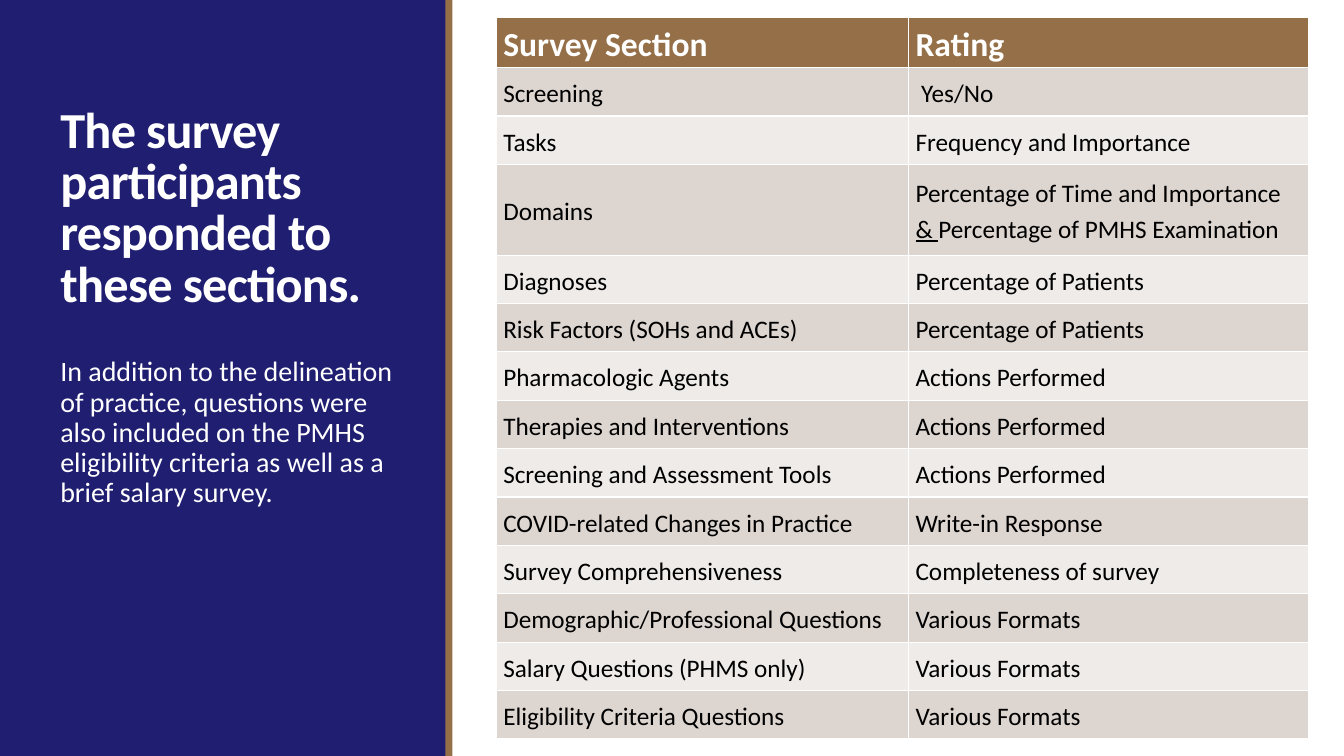
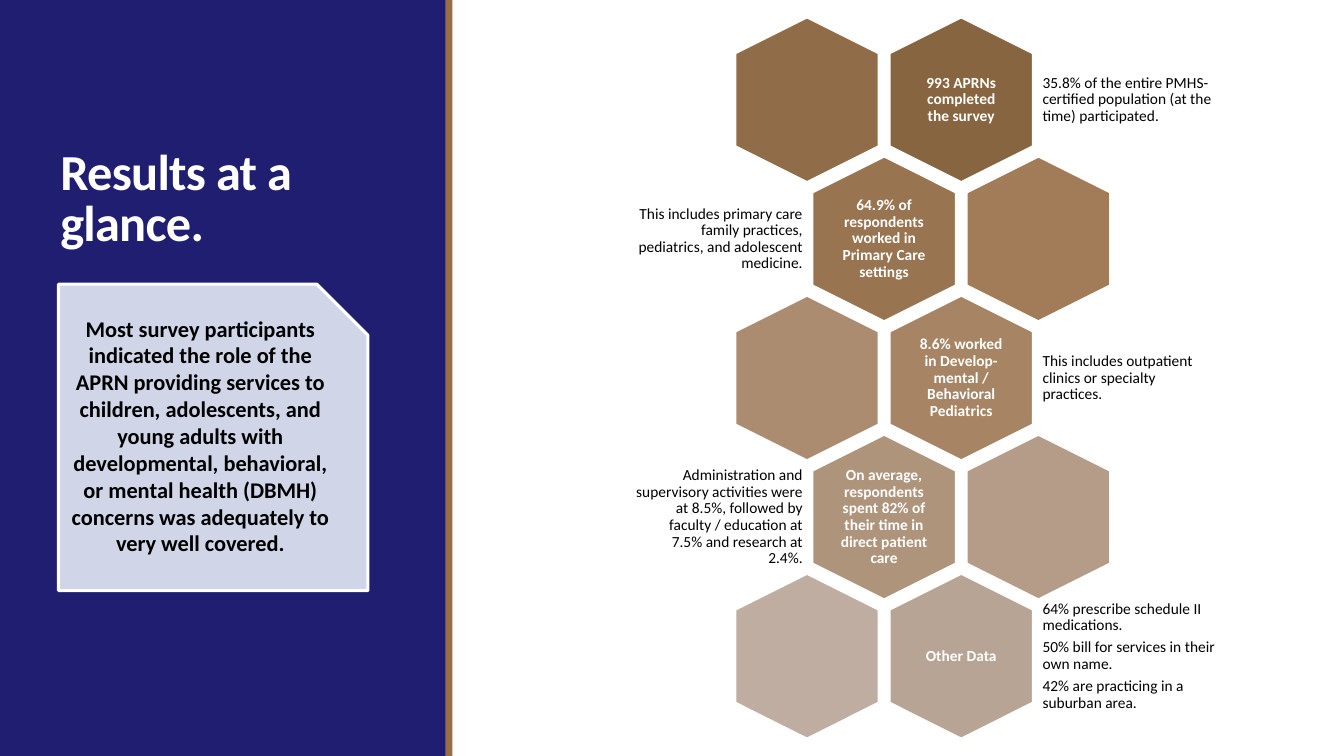
from pptx import Presentation
from pptx.dml.color import RGBColor
from pptx.enum.shapes import MSO_SHAPE as Preset
from pptx.enum.text import MSO_ANCHOR as Anchor, PP_ALIGN as Align
from pptx.util import Pt

COLORS = {
    "navy": "201E70", "bronze": "956F47", "white": "FFFFFF", "black": "000000",
    "pale_blue": "D0D5E7", "band_dark": "DDD5CF", "band_light": "EFEBE9",
}
# Each text style: font, paragraph and frame settings.
STYLES = {
    "title": dict(color="white", font=dict(size=Pt(36), bold=True), tracking=-50,
                  para=dict(line_spacing=0.85), frame=dict(vertical_anchor=Anchor.BOTTOM)),
    "body": dict(color="white", font=dict(size=Pt(20)),
                 para=dict(line_spacing=0.9, space_before=Pt(12), space_after=Pt(2))),
    "callout": dict(color="black", font=dict(size=Pt(16), bold=True),
                    para=dict(alignment=Align.CENTER)),
    "header": dict(color="white", font=dict(size=Pt(24), bold=True),
                   para=dict(line_spacing=1.15, space_before=Pt(3), space_after=Pt(2))),
    "cell": dict(color="black", font=dict(size=Pt(18), bold=False),
                 para=dict(line_spacing=1.15, space_before=Pt(3), space_after=Pt(2))),
    "finding": dict(color="white", font=dict(size=Pt(11), bold=True), inset=3.6,
                    para=dict(alignment=Align.CENTER, line_spacing=0.9),
                    frame=dict(vertical_anchor=Anchor.MIDDLE)),
    "detail": dict(color="black", font=dict(size=Pt(11)), inset=3.6,
                   para=dict(line_spacing=0.9, space_after=Pt(3.9)),
                   frame=dict(vertical_anchor=Anchor.MIDDLE)),
}
SIDES = ("margin_left", "margin_top", "margin_right", "margin_bottom")

SURVEY_SECTIONS = [
    ("Survey Section", "Rating"),
    ("Screening", " Yes/No"),
    ("Tasks", "Frequency and Importance"),
    ("Domains", [("Percentage of Time and Importance ", {}), ("& ", {"underline": True}),
                 ("Percentage of PMHS Examination", {})]),
    ("Diagnoses", "Percentage of Patients"),
    ("Risk Factors (SOHs and ACEs)", "Percentage of Patients"),
    ("Pharmacologic Agents", "Actions Performed"),
    ("Therapies and Interventions", "Actions Performed"),
    ("Screening and Assessment Tools", "Actions Performed"),
    ("COVID-related Changes in Practice", "Write-in Response"),
    ("Survey Comprehensiveness", "Completeness of survey"),
    ("Demographic/Professional Questions", "Various Formats"),
    ("Salary Questions (PHMS only)", "Various Formats"),
    ("Eligibility Criteria Questions", "Various Formats"),
]
HEADER_HEIGHT, ROW_HEIGHT, DOMAINS_HEIGHT = 36, 34.56, 64.8

# Finding, its details, and the fills of the left and right hexagon.
FINDINGS = [
    ("993 APRNs completed the survey",
     ["35.8% of the entire PMHS-certified population (at the time) participated."],
     ("906C48", "876540")),
    ("64.9% of respondents worked in Primary Care settings",
     ["This includes primary care family practices, pediatrics, and adolescent medicine."],
     ("997450", "A27C58")),
    ("8.6% worked in Develop-mental / Behavioral Pediatrics",
     ["This includes outpatient clinics or specialty practices."],
     ("AB8C70", "A78463")),
    ("On average, respondents spent 82% of their time in direct patient care",
     ["Administration and supervisory activities were at 8.5%, followed by "
      "faculty / education at 7.5% and research at 2.4%."],
     ("AF947C", "B49C88")),
    ("Other Data",
     ["64% prescribe schedule II medications.",
      "50% bill for services in their own name.",
      "42% are practicing in a suburban area."],
     ("BEADA0", "B8A494")),
]


def rgb(color):
    return RGBColor.from_string(COLORS.get(color, color))


def set_values(target, values):
    for name, value in values.items():
        setattr(target, name, value)


class Deck:
    def __init__(self):
        self.prs = Presentation()
        self.prs.slide_width, self.prs.slide_height = Pt(960), Pt(540)
        self.slide = None

    def new_slide(self, title, title_height):
        """Start a slide with the navy panel, its bronze edge and the title."""
        self.slide = self.prs.slides.add_slide(self.prs.slide_layouts[6])
        self.shape(Preset.RECTANGLE, (0, 0, 319, 540), "navy")
        self.shape(Preset.RECTANGLE, (318.2, 0, 5, 540), "bronze")
        self.text((36, 46.8, 252, title_height), [title], "title")

    def shape(self, preset, box, fill, line_width=0):
        shape = self.slide.shapes.add_shape(preset, *map(Pt, box))
        shape.shadow.inherit = False
        shape.fill.solid()
        shape.fill.fore_color.rgb = rgb(fill)
        if line_width:
            shape.line.color.rgb = rgb("white")
            shape.line.width = Pt(line_width)
        else:
            shape.line.fill.background()
        return shape

    def text(self, box, paragraphs, style, **para_values):
        frame = self.slide.shapes.add_textbox(*map(Pt, box)).text_frame
        self.fill_frame(frame, paragraphs, style, **para_values)

    def fill_frame(self, frame, paragraphs, style, **para_values):
        """Fill a frame; a paragraph is a string or a list of (text, font values)."""
        look = STYLES[style]
        frame.word_wrap = True
        set_values(frame, look.get("frame", {}))
        if "inset" in look:
            set_values(frame, dict.fromkeys(SIDES, Pt(look["inset"])))
        for index, content in enumerate(paragraphs):
            para = frame.add_paragraph() if index else frame.paragraphs[0]
            set_values(para, {**look["para"], **para_values})
            runs = [(content, {})] if isinstance(content, str) else content
            for words, font_values in runs:
                run = para.add_run()
                run.text = words
                set_values(run.font, {"name": "Calibri", **look["font"], **font_values})
                run.font.color.rgb = rgb(look["color"])
                if "tracking" in look:
                    run.font._element.set("spc", str(look["tracking"]))

    def table(self, left, top, widths, heights, rows):
        box = (left, top, sum(widths), sum(heights))
        table = self.slide.shapes.add_table(len(rows), len(widths), *map(Pt, box)).table
        for column, width in zip(table.columns, widths):
            column.width = Pt(width)
        for row_no, (row, height) in enumerate(zip(rows, heights)):
            table.rows[row_no].height = Pt(height)
            band = "band_dark" if row_no % 2 else "band_light"
            for column_no, content in enumerate(row):
                cell = table.cell(row_no, column_no)
                cell.fill.solid()
                cell.fill.fore_color.rgb = rgb(band if row_no else "bronze")
                cell.vertical_anchor = Anchor.MIDDLE
                set_values(cell, dict(zip(SIDES, map(Pt, (5, 0, 5, 0)))))
                self.fill_frame(cell.text_frame, [content], "cell" if row_no else "header")

    def hexagon(self, center_x, center_y, fill):
        width, height = 117.4, 102.2
        box = (center_x - width / 2, center_y - height / 2, width, height)
        self.shape(Preset.HEXAGON, box, fill, 1.25).rotation = 90

    def honeycomb(self, findings):
        """Stack hexagon pairs, odd rows shifted, with details on alternating sides."""
        column_gap, row_gap, detail_gap, detail_height = 110.2, 99.36, 54.5, 70.6
        for row_no, (finding, details, fills) in enumerate(findings):
            shifted = row_no % 2
            first_x = 576.4 + shifted * column_gap / 2
            center_y = 71.3 + row_no * row_gap
            for column_no, fill in enumerate(fills):
                self.hexagon(first_x + column_no * column_gap, center_y, fill)
            finding_x = first_x if shifted else first_x + column_gap
            self.text((finding_x - 35, center_y - 40.3, 70, 80.6), [finding], "finding")
            width = 126.7 if shifted else 131
            detail_x = finding_x - detail_gap - width if shifted else finding_x + detail_gap
            self.text((detail_x, center_y - detail_height / 2, width, detail_height), details,
                      "detail", alignment=Align.RIGHT if shifted else Align.LEFT)


def main():
    deck = Deck()

    deck.new_slide("The survey participants responded to these sections.", 180)
    heights = [HEADER_HEIGHT] + [ROW_HEIGHT] * (len(SURVEY_SECTIONS) - 1)
    heights[3] = DOMAINS_HEIGHT
    deck.table(354.5, 12.3, (294.5, 285.8), heights, SURVEY_SECTIONS)
    deck.text((36, 252, 252, 244.8),
              ["In addition to the delineation of practice, questions were also included "
               "on the PMHS eligibility criteria as well as a brief salary survey."], "body")

    deck.new_slide("Results at a glance.", 136.8)
    callout = deck.shape(Preset.SNIP_1_RECTANGLE, (41.8, 203, 221, 218.9), "pale_blue", 2.25)
    callout.text_frame.vertical_anchor = Anchor.TOP
    deck.fill_frame(callout.text_frame,
                    ["Most survey participants indicated the role of the APRN providing "
                     "services to children, adolescents, and young adults with developmental, "
                     "behavioral, or mental health (DBMH) concerns was adequately to very "
                     "well covered."], "callout")
    deck.honeycomb(FINDINGS)

    deck.prs.save("out.pptx")


if __name__ == "__main__":
    main()
